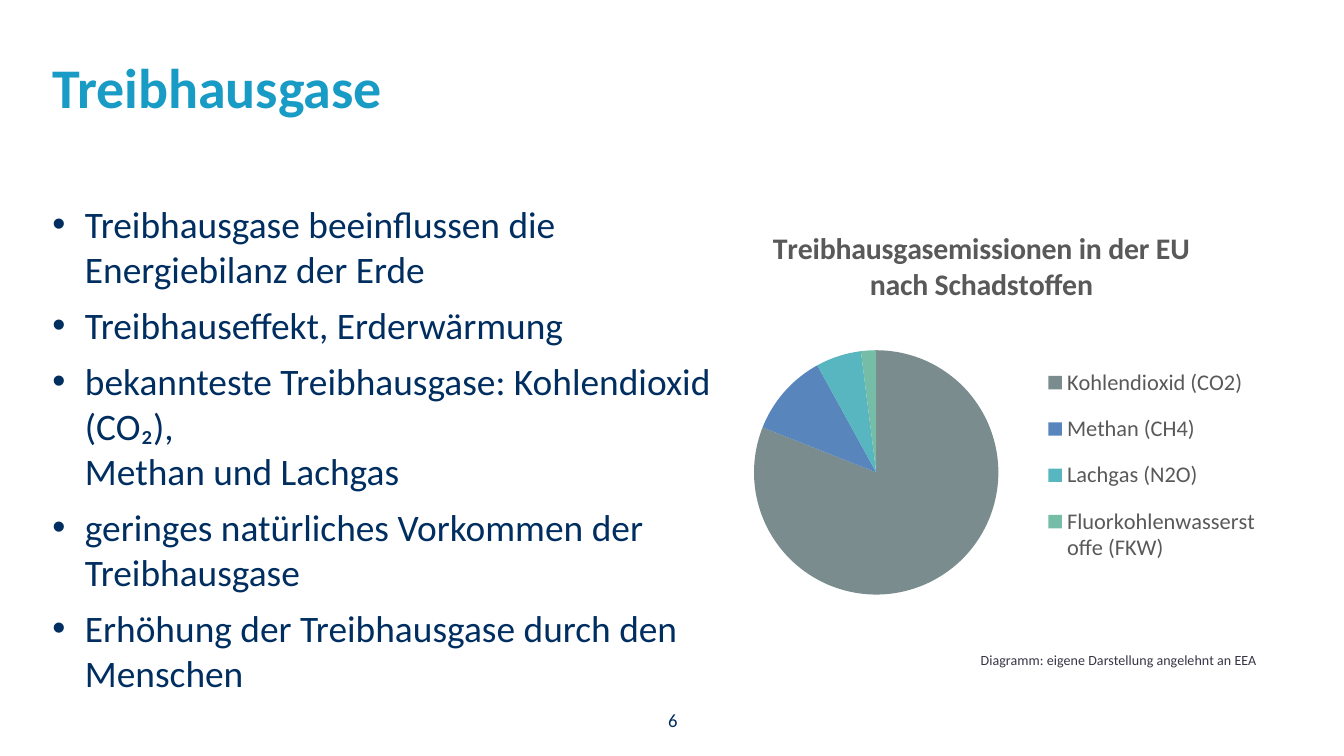
"""Build a slide on greenhouse gases with a bullet list and a pie chart."""
from dataclasses import dataclass

from lxml import etree
from pptx import Presentation
from pptx.chart.data import CategoryChartData
from pptx.dml.color import RGBColor
from pptx.enum import chart as ch, text as tx
from pptx.oxml import ns
from pptx.util import Pt


@dataclass(frozen=True)
class Theme:
    face: str = "Calibri"
    title: str = "189BC4"
    body: str = "002E60"
    label: str = "595959"
    note: str = "373545"
    slices: tuple = ("7A8C8E", "5885BC", "58B6C0", "75BDA7")
    title_size: float = 30
    body_size: float = 20
    head_size: float = 16
    key_size: float = 12
    page_size: float = 10
    note_size: float = 7.5


theme = Theme()


def style(font, size, color, bold=False):
    font.name = theme.face
    font.size = Pt(size)
    font.bold = bold
    font.color.rgb = RGBColor.from_string(color)


def place(part, after, x, y, w, h, inner=False):
    for old in part.findall(ns.qn("c:layout")):
        part.remove(old)
    layout = etree.Element(ns.qn("c:layout"))
    manual = etree.SubElement(layout, ns.qn("c:manualLayout"))
    rows = [("layoutTarget", "inner")] if inner else []
    rows += [("xMode", "edge"), ("yMode", "edge"),
             ("x", x), ("y", y), ("w", w), ("h", h)]
    for tag, val in rows:
        etree.SubElement(manual, ns.qn("c:" + tag)).set("val", str(val))
    part.insert(after, layout)


prs = Presentation()
prs.slide_width, prs.slide_height = Pt(720), Pt(405)
slide = prs.slides.add_slide(prs.slide_layouts[1])

title, body = slide.placeholders
page = slide.shapes.add_textbox(Pt(332), Pt(374.5), Pt(57), Pt(22))
note = slide.shapes.add_textbox(Pt(496), Pt(343), Pt(182), Pt(21.5))
title.left, title.top, title.width, title.height = Pt(28), Pt(28), Pt(595), Pt(73)
body.left, body.top, body.width, body.height = Pt(28), Pt(108), Pt(376), Pt(261)

top, mid = tx.MSO_ANCHOR.TOP, tx.MSO_ANCHOR.MIDDLE
for box, anchor, pad in ((title, top, 0), (body, top, 0),
                         (page, mid, 0), (note, mid, 5)):
    frame = box.text_frame
    frame.word_wrap = True
    frame.auto_size = tx.MSO_AUTO_SIZE.NONE
    frame.vertical_anchor = anchor
    frame.margin_left = frame.margin_right = Pt(pad)
    frame.margin_top = frame.margin_bottom = Pt(pad * 0.6)

align = tx.PP_ALIGN
for box, words, side, size, color, bold in (
    (title, "Treibhausgase", align.LEFT, theme.title_size, theme.title, True),
    (page, "6", align.CENTER, theme.page_size, theme.body, False),
    (note, "Diagramm: eigene Darstellung angelehnt an EEA", align.RIGHT,
     theme.note_size, theme.note, False),
):
    para = box.text_frame.paragraphs[0]
    para.alignment = side
    run = para.add_run()
    run.text = words
    style(run.font, size, color, bold)

points = (
    ("Treibhausgase beeinflussen die Energiebilanz der Erde",),
    ("Treibhauseffekt, Erderwärmung",),
    ("bekannteste Treibhausgase: Kohlendioxid (CO₂),", "Methan und Lachgas"),
    ("geringes natürliches Vorkommen der Treibhausgase",),
    ("Erhöhung der Treibhausgase durch den Menschen",),
)
frame = body.text_frame
for i, lines in enumerate(points):
    para = frame.add_paragraph() if i else frame.paragraphs[0]
    props = para._p.get_or_add_pPr()
    props.set("marL", str(Pt(17.5)))
    props.set("indent", str(-Pt(17.5)))
    etree.SubElement(props, ns.qn("a:buFont")).set("typeface", "Arial")
    etree.SubElement(props, ns.qn("a:buChar")).set("char", "•")
    para.space_before = Pt(6 if i else 0)
    for j, line in enumerate(lines):
        if j:
            para.add_line_break()
        run = para.add_run()
        run.text = line
        style(run.font, theme.body_size, theme.body)

data = CategoryChartData()
data.categories = ("Kohlendioxid (CO2)", "Methan (CH4)", "Lachgas (N2O)",
                   "Fluorkohlenwasserstoffe (FKW)")
data.add_series("Series 1", (81, 11, 6, 2))
chart = slide.shapes.add_chart(ch.XL_CHART_TYPE.PIE, Pt(373.5), Pt(111.5),
                               Pt(304.5), Pt(253), data).chart
chart.font.name = theme.face
chart.font.size = Pt(theme.page_size)

chart.has_title = True
frame = chart.chart_title.text_frame
for i, line in enumerate(("Treibhausgasemissionen in der EU", "nach Schadstoffen")):
    para = frame.add_paragraph() if i else frame.paragraphs[0]
    run = para.add_run()
    run.text = line
    style(run.font, theme.head_size, theme.label, True)

chart.has_legend = True
key = chart.legend
key.position = ch.XL_LEGEND_POSITION.RIGHT
key.include_in_layout = False
style(key.font, theme.key_size, theme.label)

plot = chart.plots[0]
plot.vary_by_categories = True
for i, color in enumerate(theme.slices):
    fill = plot.series[0].points[i].format.fill
    fill.solid()
    fill.fore_color.rgb = RGBColor.from_string(color)

place(chart._chartSpace.chart.plotArea, 0, 0.1, 0.26, 0.43, 0.6, True)
place(key._element, 1, 0.61, 0.3, 0.38, 0.49)

prs.save("out.pptx")
